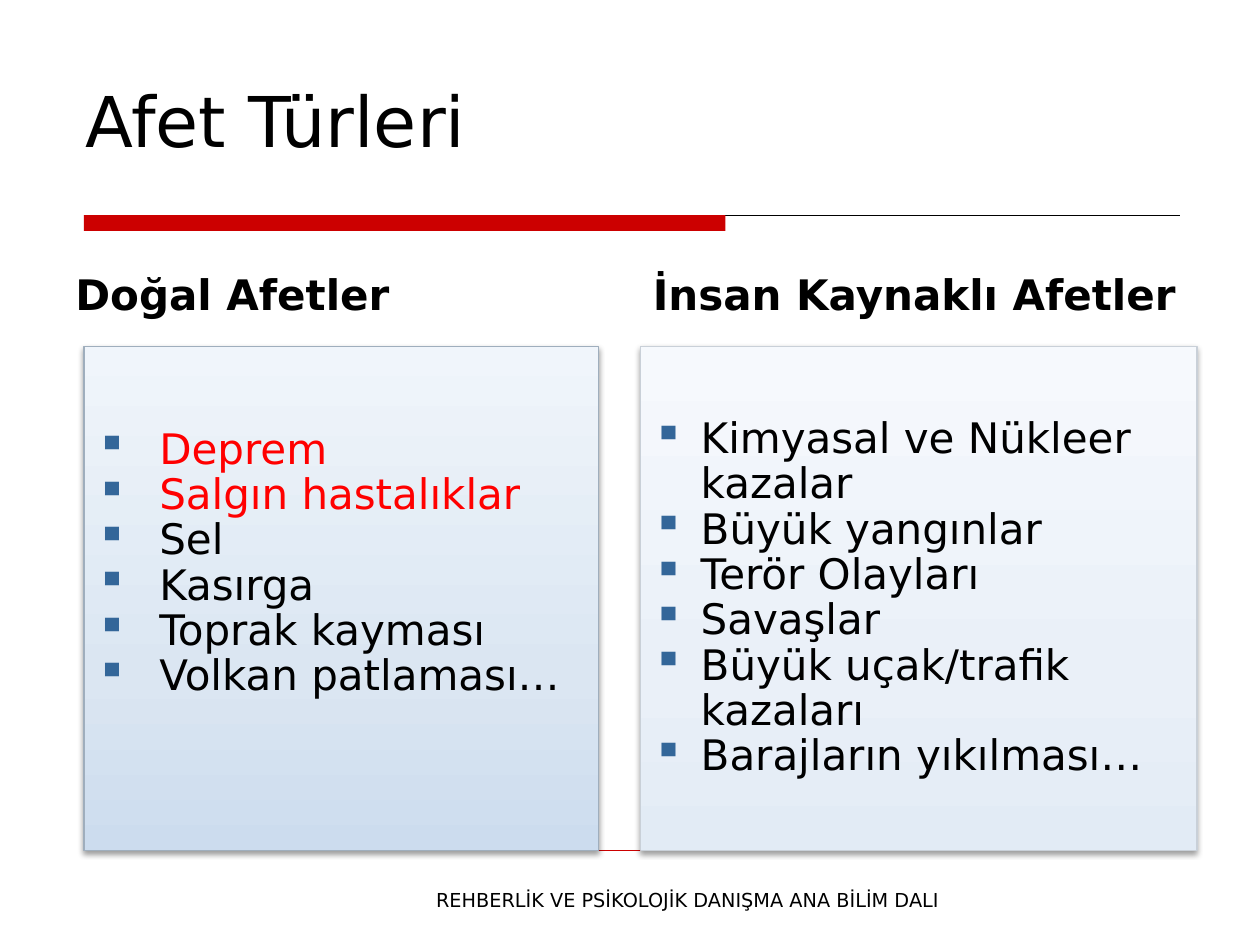
"""Build a slide that sets natural disasters beside those caused by people."""
from copy import deepcopy
from dataclasses import dataclass

from lxml.etree import SubElement
from pptx import Presentation
from pptx.dml.color import RGBColor
from pptx.enum.shapes import MSO_CONNECTOR, MSO_SHAPE
from pptx.enum.text import MSO_ANCHOR, PP_ALIGN
from pptx.oxml.ns import qn
from pptx.util import Inches, Pt


@dataclass(frozen=True)
class Theme:
    font: str = "DejaVu Sans"
    ink: str = "000000"
    accent: str = "CC0000"
    highlight: str = "FF0000"
    bullet: str = "336699"
    title_size: int = 40
    body_size: int = 24
    footer_size: int = 11
    columns: int = 120
    rows: int = 90


class SlideBuilder:
    def __init__(self, presentation, theme):
        self.theme = theme
        self.slide = presentation.slides.add_slide(presentation.slide_layouts[6])
        self.column = presentation.slide_width / theme.columns
        self.row = presentation.slide_height / theme.rows

    def place(self, left, top, width, height):
        return (round(left * self.column), round(top * self.row),
                round(width * self.column), round(height * self.row))

    def style(self, paragraph, size, color, bold=False):
        for run in paragraph.runs:
            run.font.name = self.theme.font
            run.font.size = Pt(size)
            run.font.bold = bold
            run.font.color.rgb = RGBColor.from_string(color)

    def text(self, box, text, size, bold=False,
             anchor=MSO_ANCHOR.BOTTOM, align=PP_ALIGN.LEFT):
        text_frame = self.slide.shapes.add_textbox(*self.place(*box)).text_frame
        text_frame.word_wrap = True
        text_frame.vertical_anchor = anchor
        text_frame.text = text
        paragraph = text_frame.paragraphs[0]
        paragraph.alignment = align
        self.style(paragraph, size, self.theme.ink, bold)

    def rule(self, left, right, top, color, weight):
        start_x, start_y, width, _ = self.place(left, top, right - left, 0)
        line = self.slide.shapes.add_connector(
            MSO_CONNECTOR.STRAIGHT, start_x, start_y, start_x + width, start_y)
        line.line.color.rgb = RGBColor.from_string(color)
        line.line.width = Pt(weight)
        SubElement(line._element.spPr, qn("a:effectLst"))

    def rectangle(self, box):
        shape = self.slide.shapes.add_shape(MSO_SHAPE.RECTANGLE, *self.place(*box))
        shape.shadow.inherit = False
        return shape

    def bar(self, box, color):
        shape = self.rectangle(box)
        shape.fill.solid()
        shape.fill.fore_color.rgb = RGBColor.from_string(color)
        shape.line.fill.background()

    def gradient(self, shape, colors):
        shape.fill.gradient()
        shape.fill.gradient_angle = 90
        first = next(shape._element.spPr.iter(qn("a:gs")))
        first.addnext(deepcopy(first))
        for stop, position, color in zip(shape.fill.gradient_stops, (0, 0.35, 1), colors):
            stop.position = position
            stop.color.rgb = RGBColor.from_string(color)

    def soft_shadow(self, shape):
        effects = shape._element.spPr.find(qn("a:effectLst"))
        shadow = SubElement(effects, qn("a:outerShdw"), blurRad=str(Pt(3.1)),
                            dist=str(Pt(1.6)), dir="5400000", rotWithShape="0")
        color = SubElement(shadow, qn("a:srgbClr"), val=self.theme.ink)
        SubElement(color, qn("a:alpha"), val="38000")

    def bullet(self, paragraph, indent):
        properties = paragraph._p.get_or_add_pPr()
        properties.set("marL", str(Inches(indent)))
        properties.set("indent", str(-Inches(indent)))
        color = SubElement(properties, qn("a:buClr"))
        SubElement(color, qn("a:srgbClr"), val=self.theme.bullet)
        SubElement(properties, qn("a:buChar"), char="▪")

    def panel(self, box, items, colors, outline, indent, highlighted=0, bottom=0.05):
        shape = self.rectangle(box)
        self.gradient(shape, colors)
        shape.line.color.rgb = RGBColor.from_string(outline)
        shape.line.width = Pt(0.75)
        self.soft_shadow(shape)
        text_frame = shape.text_frame
        text_frame.word_wrap = True
        text_frame.vertical_anchor = MSO_ANCHOR.MIDDLE
        text_frame.margin_bottom = Inches(bottom)
        text_frame.text = "\n".join(items)
        for index, paragraph in enumerate(text_frame.paragraphs):
            paragraph.alignment = PP_ALIGN.LEFT
            paragraph.line_spacing = 0.9
            self.bullet(paragraph, indent)
            color = self.theme.highlight if index < highlighted else self.theme.ink
            self.style(paragraph, self.theme.body_size, color)


def main():
    presentation = Presentation()
    presentation.slide_width, presentation.slide_height = Inches(10), Inches(7.5)
    theme = Theme()
    builder = SlideBuilder(presentation, theme)

    builder.rule(8, 112.4, 20.5, theme.ink, 0.75)
    builder.bar((8, 20.5, 61.1, 1.5), theme.accent)
    builder.rule(8, 112, 81, theme.accent, 0.25)

    builder.text((7, 3.6, 107, 12.4), "Afet Türleri", theme.title_size)
    headings = {6: "Doğal Afetler", 61: "İnsan Kaynaklı Afetler"}
    for left, heading in headings.items():
        builder.text((left, 23, 53, 8), heading, theme.body_size, bold=True)

    builder.panel(
        (8, 33, 49, 48),
        ["Deprem", "Salgın hastalıklar", "Sel", "Kasırga",
         "Toprak kayması", "Volkan patlaması…"],
        ("CCDCEE", "DBE6F2", "F0F5FB"), "9FAEBD", indent=0.5,
        highlighted=2, bottom=0.6)
    builder.panel(
        (61, 33, 53, 48),
        ["Kimyasal ve Nükleer kazalar", "Büyük yangınlar", "Terör Olayları",
         "Savaşlar", "Büyük uçak/trafik kazaları", "Barajların yıkılması…"],
        ("E2EBF5", "EAF0F8", "F6F9FD"), "C9D0D8", indent=0.38)

    builder.text((34, 84, 63, 4.2), "REHBERLİK VE PSİKOLOJİK DANIŞMA ANA BİLİM DALI",
                 theme.footer_size, anchor=MSO_ANCHOR.TOP, align=PP_ALIGN.CENTER)
    presentation.save("out.pptx")


if __name__ == "__main__":
    main()
